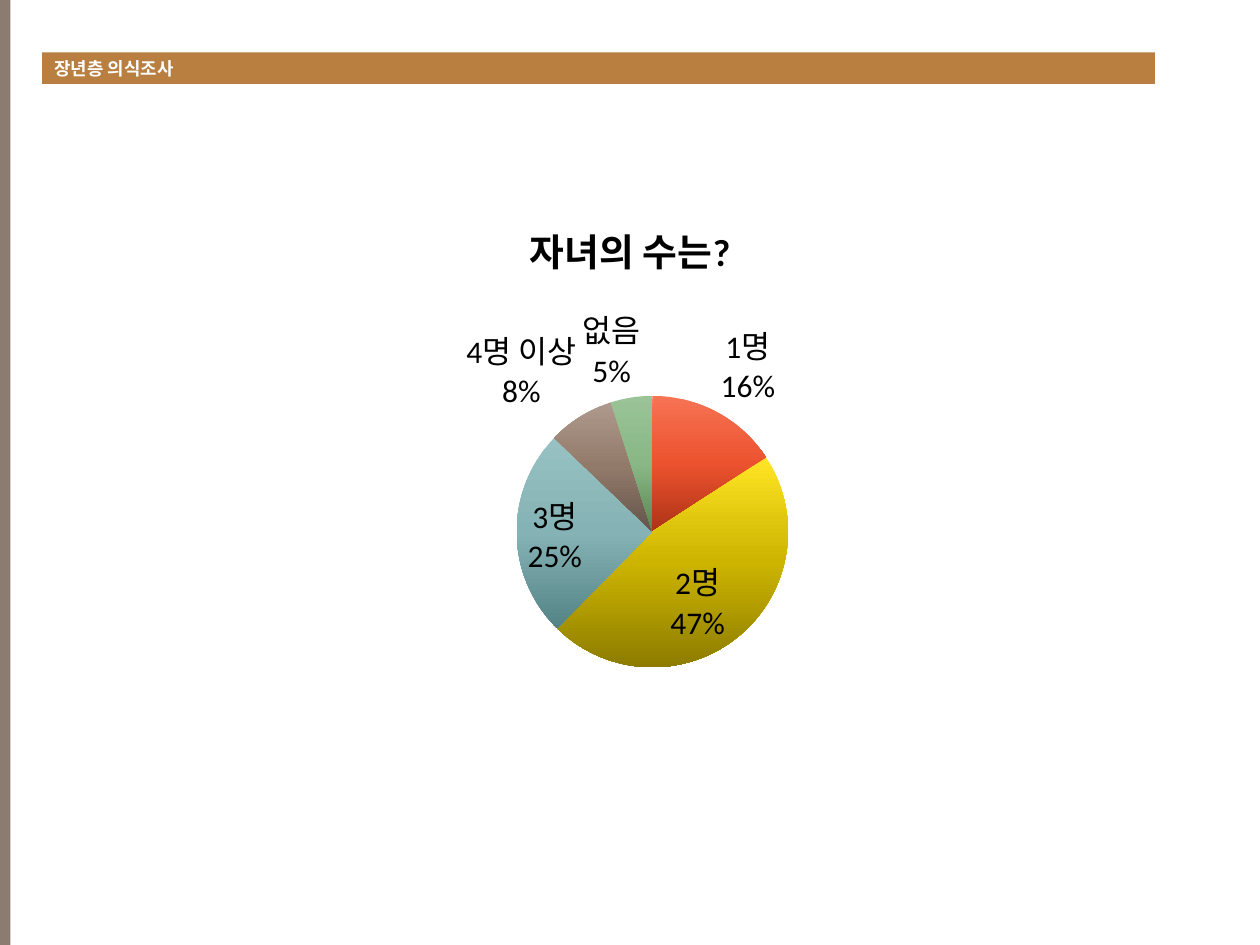
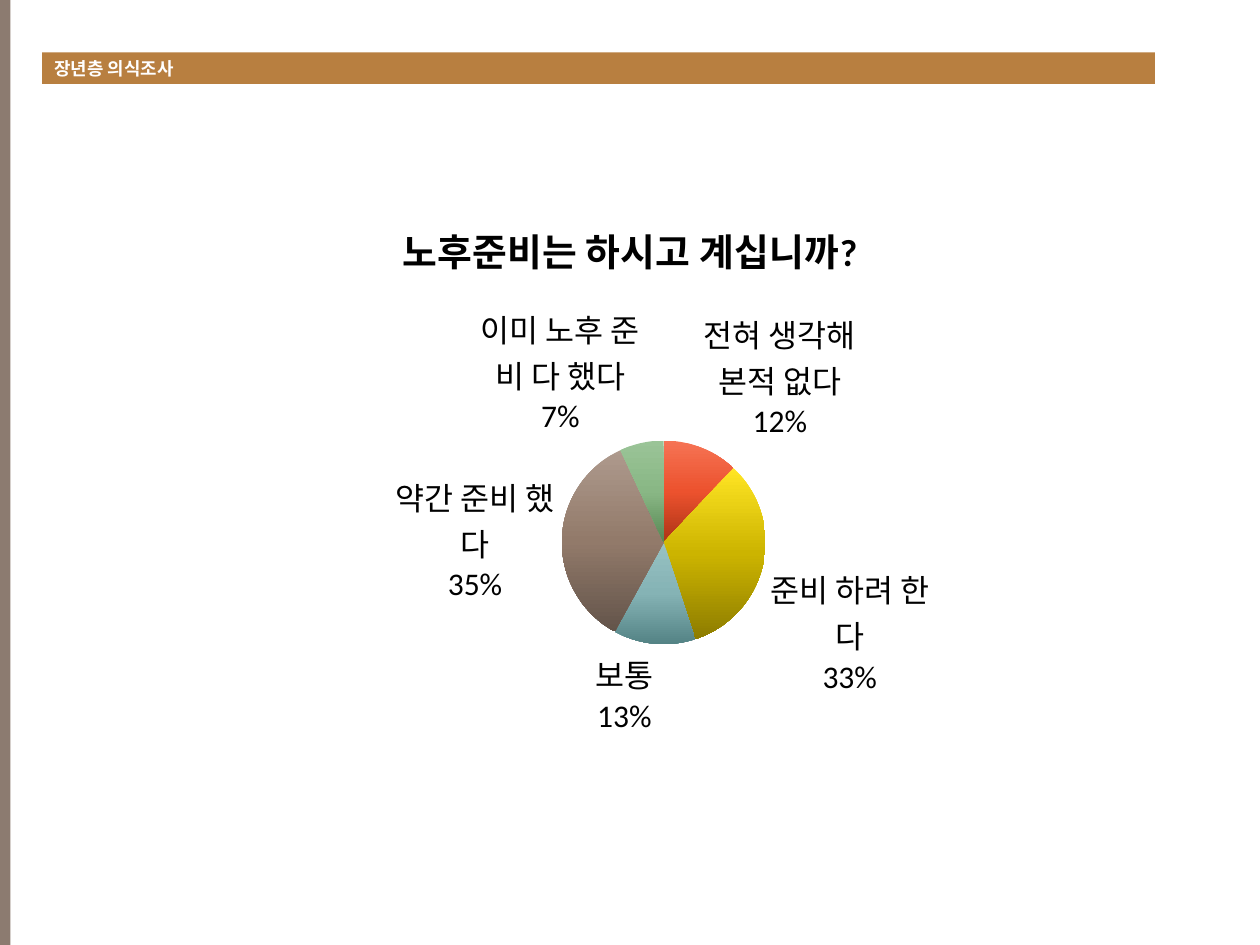
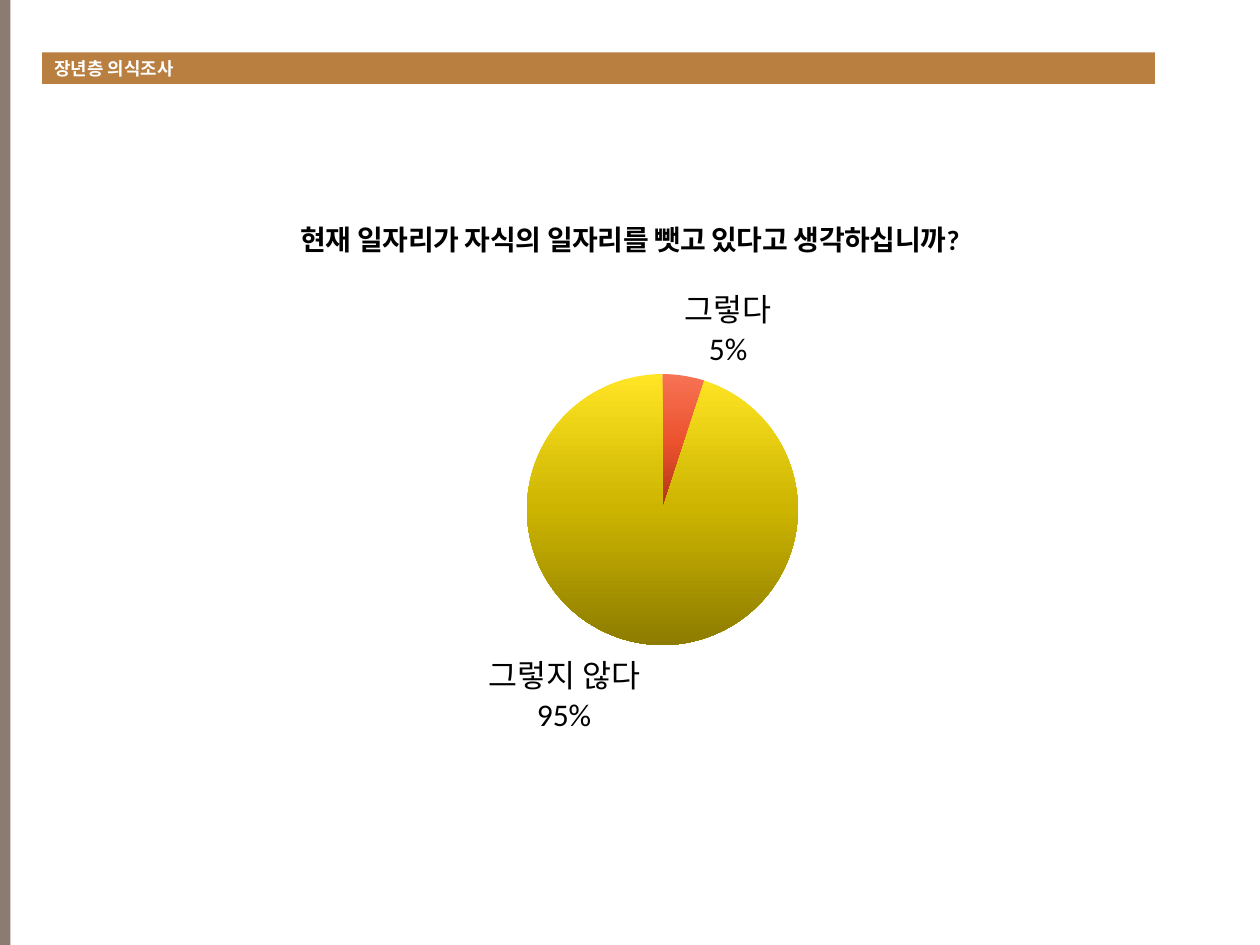
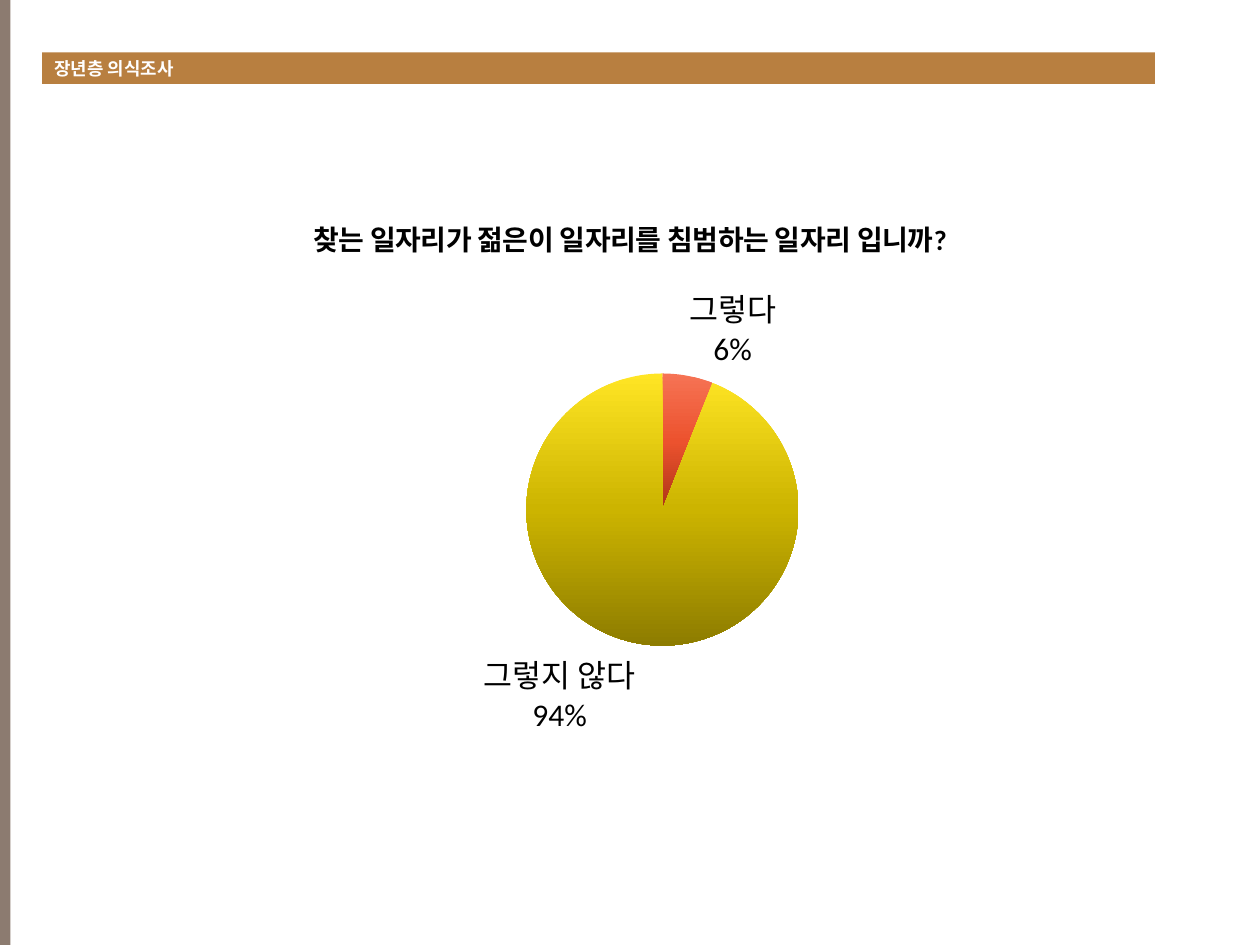
import lxml.etree
import pptx
import pptx.chart.data
import pptx.dml.color
import pptx.enum.chart
import pptx.enum.shapes
import pptx.enum.text
import pptx.oxml.ns
import pptx.util

Pt = pptx.util.Pt
RGBColor = pptx.dml.color.RGBColor
qn = pptx.oxml.ns.qn

# Shared style
FONT = "Calibri"
BLACK = RGBColor(0x00, 0x00, 0x00)
WHITE = RGBColor(0xFF, 0xFF, 0xFF)
BROWN = RGBColor(0x8C, 0x7B, 0x70)
OCHRE = RGBColor(0xB8, 0x7F, 0x40)
RED = RGBColor(0xD1, 0x63, 0x49)
YELLOW = RGBColor(0xCC, 0xB4, 0x00)
TEAL = RGBColor(0x8C, 0xAD, 0xAE)
GREEN = RGBColor(0x8F, 0xB0, 0x8C)
SLICES = [RED, YELLOW, TEAL, BROWN, GREEN]

# Slice shading from top to bottom: position and colour modifiers in percent
SHADING = [
    (0, {"satMod": 150, "lumMod": 50, "lumOff": 37}),
    (50, {"satMod": 140}),
    (100, {"satMod": 130, "lumMod": 69}),
]

SURVEY = "장년층 의식조사"
YES_NO = ["그렇다", "그렇지 않다"]

# Question, title size, answers, percentages
QUESTIONS = [
    ("자녀의 수는?", 21.6,
     ["1명", "2명", "3명", "4명 이상", "없음"], [16, 47, 25, 8, 5]),
    ("노후준비는 하시고 계십니까?", 21.6,
     ["전혀 생각해 본적 없다", "준비 하려 한다", "보통", "약간 준비 했다",
      "이미 노후 준비 다 했다"], [12, 33, 13, 35, 7]),
    ("현재 일자리가 자식의 일자리를 뺏고 있다고 생각하십니까?", 16,
     YES_NO, [5, 95]),
    ("찾는 일자리가 젊은이 일자리를 침범하는 일자리 입니까?", 16,
     YES_NO, [6, 94]),
]


def write(tf, text, size=18, color=BLACK, bold=False, align=None, before=0):
    p = tf.paragraphs[0]
    p.alignment = align
    p.space_before = Pt(before)
    r = p.add_run()
    r.text = text
    r.font.name = FONT
    r.font.size = Pt(size)
    r.font.bold = bold
    r.font.color.rgb = color


def shade(fmt, color):
    """Fill a slice with a vertical gradient built on its base colour."""
    fmt.line.fill.background()
    fmt.fill.gradient()
    fmt.fill.gradient_angle = 270
    stops = fmt.fill._xPr.find(qn("a:gradFill")).find(qn("a:gsLst"))
    for gs in list(stops):
        stops.remove(gs)
    for pos, mods in SHADING:
        gs = lxml.etree.SubElement(stops, qn("a:gs"), pos=str(pos * 1000))
        clr = lxml.etree.SubElement(gs, qn("a:srgbClr"), val=str(color))
        for name, percent in mods.items():
            lxml.etree.SubElement(clr, qn("a:" + name), val=str(percent * 1000))


class Deck:
    def __init__(self):
        self.prs = pptx.Presentation()
        self.prs.slide_width = Pt(720)
        self.prs.slide_height = Pt(540)
        self.s = None

    def slide(self):
        self.s = self.prs.slides.add_slide(self.prs.slide_layouts[6])
        self.rect(0, 0, 6, 540, BROWN)
        self.band(SURVEY)

    def rect(self, x, y, w, h, color):
        sp = self.s.shapes.add_shape(
            pptx.enum.shapes.MSO_SHAPE.RECTANGLE, Pt(x), Pt(y), Pt(w), Pt(h))
        sp.shadow.inherit = False
        sp.fill.solid()
        sp.fill.fore_color.rgb = color
        sp.line.fill.background()
        return sp

    def band(self, text):
        tf = self.rect(24, 30, 636, 18, OCHRE).text_frame
        tf.word_wrap = True
        tf.margin_top = tf.margin_bottom = 0
        tf.margin_left = tf.margin_right = Pt(7.2)
        tf.vertical_anchor = pptx.enum.text.MSO_ANCHOR.MIDDLE
        write(tf, text, size=10.2, color=WHITE, bold=True,
              align=pptx.enum.text.PP_ALIGN.LEFT, before=2)

    def pie(self, title, size, answers, values):
        data = pptx.chart.data.CategoryChartData()
        data.categories = answers
        data.add_series(title, values)
        chart = self.s.shapes.add_chart(
            pptx.enum.chart.XL_CHART_TYPE.PIE,
            Pt(120), Pt(110), Pt(480), Pt(320), data).chart
        chart.has_legend = False
        chart.font.name = FONT
        chart.font.size = Pt(18)
        chart.font.color.rgb = BLACK
        chart.has_title = True
        write(chart.chart_title.text_frame, title, size=size, bold=True)

        # Slices
        plot = chart.plots[0]
        plot.vary_by_categories = True
        for i, color in enumerate(SLICES[:len(values)]):
            shade(plot.series[0].points[i].format, color)

        # Labels: answer above its share
        plot.has_data_labels = True
        labels = plot.data_labels
        labels.show_value = False
        labels.show_category_name = True
        labels.show_percentage = True
        labels.number_format = "0%"
        labels.number_format_is_linked = False
        labels.position = pptx.enum.chart.XL_LABEL_POSITION.BEST_FIT
        separator = lxml.etree.Element(qn("c:separator"))
        separator.text = "\n"
        labels._element.find(qn("c:showBubbleSize")).addnext(separator)


def main():
    deck = Deck()
    for question in QUESTIONS:
        deck.slide()
        deck.pie(*question)
    deck.prs.save("out.pptx")


if __name__ == "__main__":
    main()
